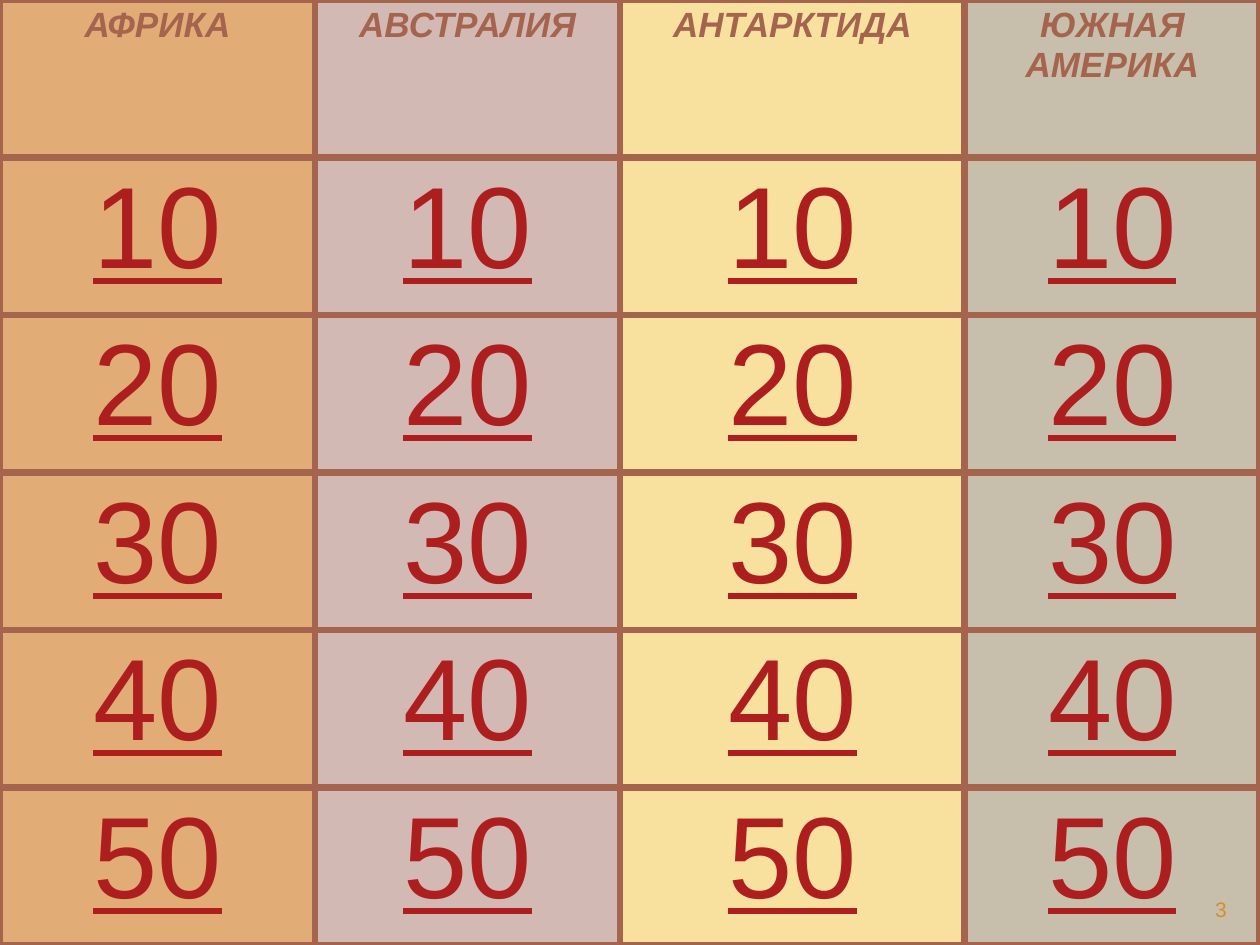
from dataclasses import dataclass

from lxml import etree
from pptx import Presentation
from pptx import util as u
from pptx.dml.color import RGBColor
from pptx.enum import text
from pptx.oxml.ns import qn

CONTINENTS = [  # name, column width in px, fill
    ("АФРИКА", 315, "E2AC76"),
    ("АВСТРАЛИЯ", 305, "D3B9B3"),
    ("АНТАРКТИДА", 345, "F8E19F"),
    ("ЮЖНАЯ АМЕРИКА", 295, "C7BFAC"),
]
POINTS = [10, 20, 30, 40, 50]
PAGE_NUMBER = "3"
PAGE_NUMBER_AREA = (1134, 892, 105, 34)
WIDTH, HEIGHT = 1260, 945


@dataclass(frozen=True)
class Theme:
    font: str = "Arial"
    border: str = "A5644E"
    border_width: float = 4.5
    heading = {"size": 20, "color": "A5644E", "bold": True, "italic": True}
    score = {"size": 66, "color": "AD1F1F", "underline": True}
    number = {"size": 12, "color": "D48F29"}


THEME = Theme()


def px(value):
    return u.Emu(round(value * u.Inches(1) / 126))


def write(frame, words, style, align):
    para = frame.paragraphs[0]
    para.alignment = align
    span = para.add_run()
    span.text = words
    formats = {"name": THEME.font, **style, "size": u.Pt(style["size"])}
    color = formats.pop("color")
    for name, value in formats.items():
        setattr(span.font, name, value)
    span.font.color.rgb = RGBColor.from_string(color)


def add_borders(cell):
    """Draw all four sides; must run before the cell gets its fill."""
    properties = cell._tc.get_or_add_tcPr()
    for side in ("lnL", "lnR", "lnT", "lnB"):
        line = etree.SubElement(properties, qn(f"a:{side}"),
                                w=str(u.Pt(THEME.border_width)))
        fill = etree.SubElement(line, qn("a:solidFill"))
        etree.SubElement(fill, qn("a:srgbClr"), val=THEME.border)


def add_board(page):
    row_count = len(POINTS) + 1
    table = page.shapes.add_table(row_count, len(CONTINENTS), 0, 0,
                                  px(WIDTH), px(HEIGHT)).table
    table.first_row = table.horz_banding = False
    for row in table.rows:
        row.height = px(HEIGHT / row_count)
    for col, (continent, width, color) in enumerate(CONTINENTS):
        table.columns[col].width = px(width)
        for row, words in enumerate([continent, *map(str, POINTS)]):
            cell = table.cell(row, col)
            add_borders(cell)
            cell.fill.solid()
            cell.fill.fore_color.rgb = RGBColor.from_string(color)
            write(cell.text_frame, words, THEME.score if row else THEME.heading,
                  text.PP_ALIGN.CENTER)


def add_page_number(page):
    box = page.shapes.add_textbox(*map(px, PAGE_NUMBER_AREA))
    box.text_frame.word_wrap = True
    box.text_frame.vertical_anchor = text.MSO_ANCHOR.MIDDLE
    write(box.text_frame, PAGE_NUMBER, THEME.number, text.PP_ALIGN.RIGHT)


def main():
    deck = Presentation()
    deck.slide_width, deck.slide_height = px(WIDTH), px(HEIGHT)
    page = deck.slides.add_slide(deck.slide_layouts[6])
    add_board(page)
    add_page_number(page)
    deck.save("out.pptx")


if __name__ == "__main__":
    main()
